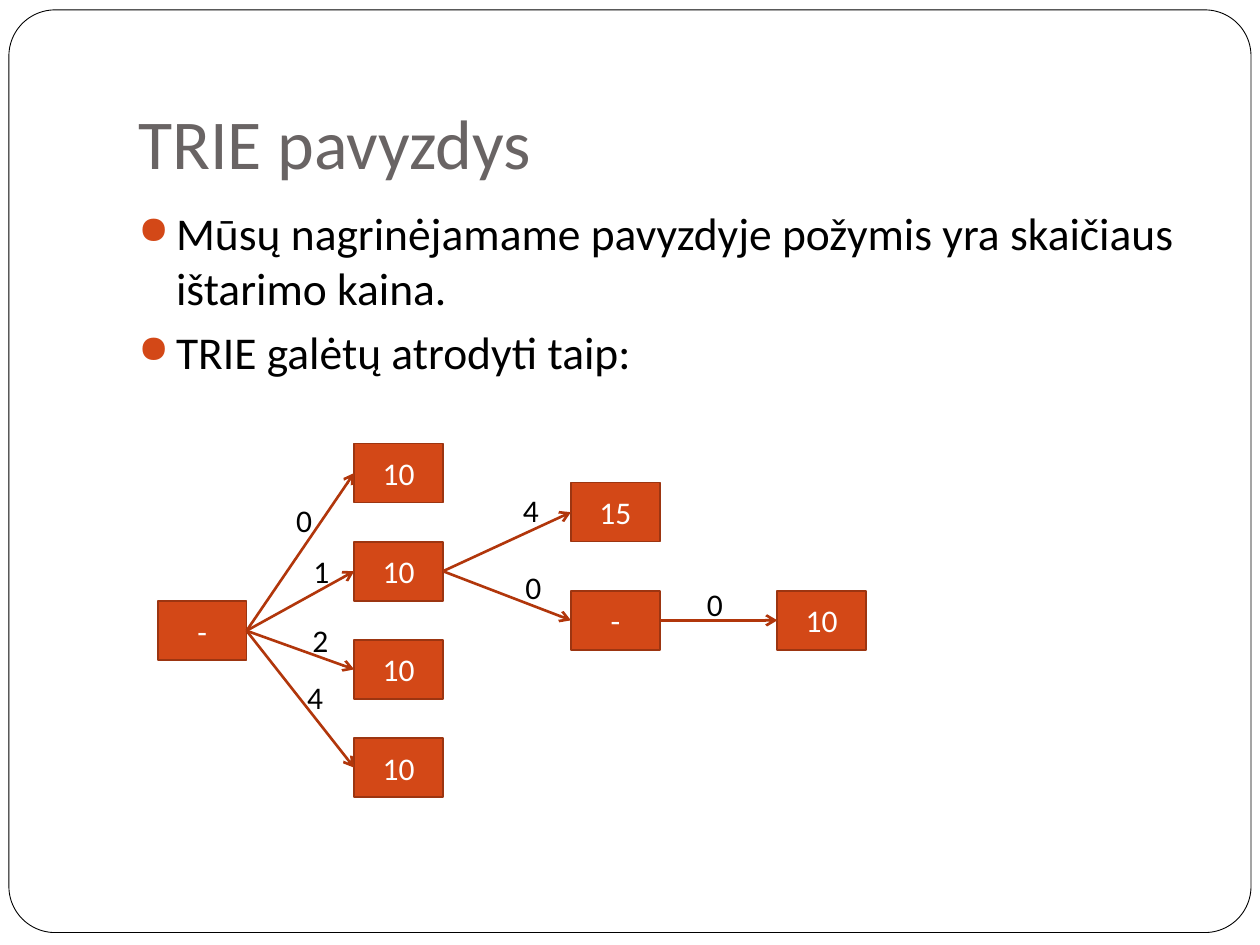
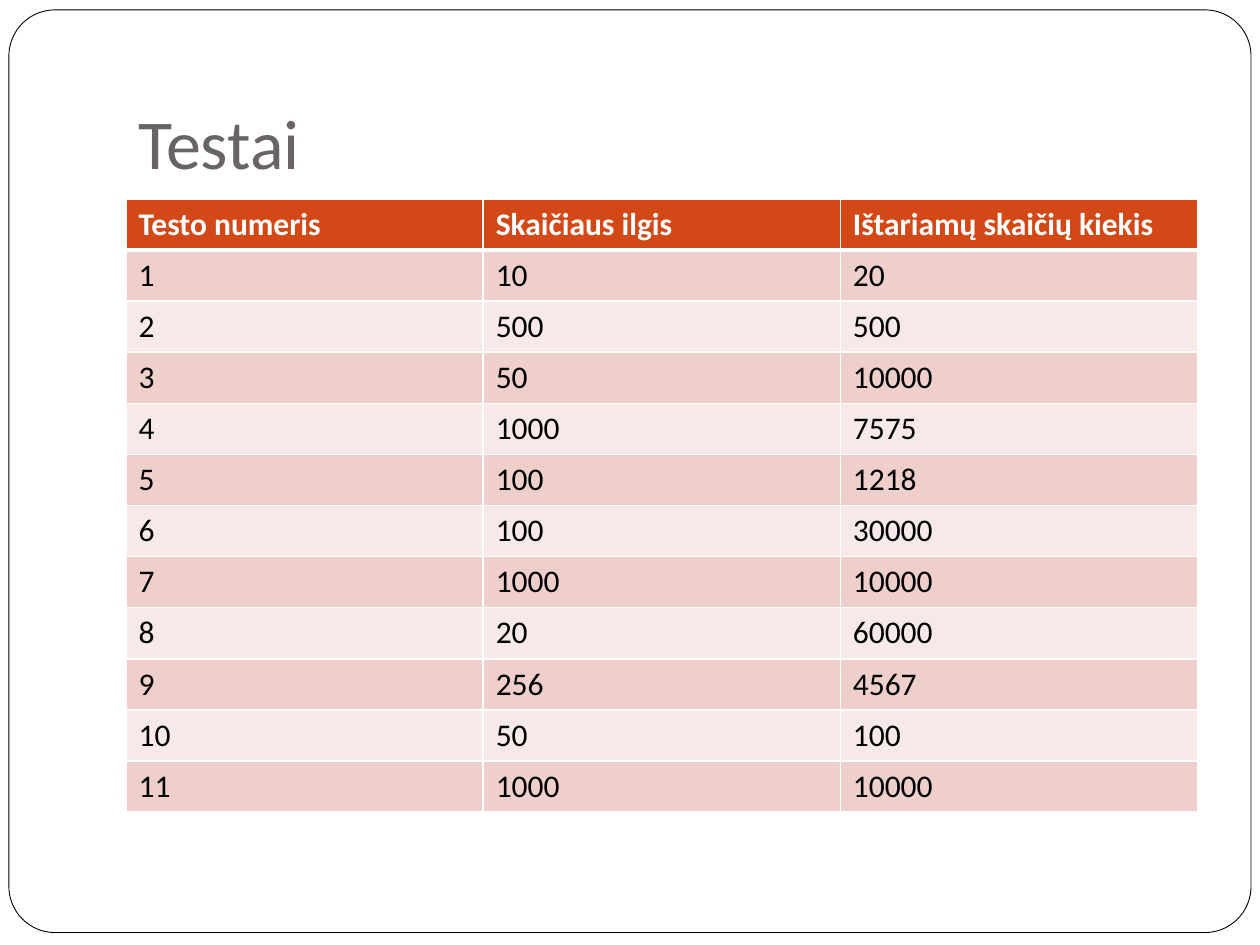
from pptx import Presentation
from pptx.dml.color import RGBColor
from pptx.enum.shapes import MSO_CONNECTOR as Link, MSO_SHAPE as Form
from pptx.enum.text import MSO_ANCHOR as Anchor, PP_ALIGN as Align
from pptx.oxml import parse_xml as to_xml
from pptx.oxml.ns import nsdecls
from pptx.util import Cm, Pt

FONT = "Calibri"
BLACK, WHITE, GREY = "000000", "FFFFFF", "696464"
RUST, EDGE, ARROW = "D34817", "9C3511", "B1360B"
BANDS = ["F7E9E8", "EFCFCC"]
NS = nsdecls("a")
BULLET = [
    f'<a:buClr {NS}><a:srgbClr val="{RUST}"/></a:buClr>',
    f'<a:buSzPct {NS} val="85000"/>',
    f'<a:buChar {NS} char="●"/>',
]


def hue(code):
    return RGBColor.from_string(code)


def put(frame, text, size=18, color=BLACK, bold=False, align=Align.LEFT,
        anchor=Anchor.TOP, bullet=False):
    frame.word_wrap = True
    frame.vertical_anchor = anchor
    for i, line in enumerate(text.split("\n")):
        par = frame.add_paragraph() if i else frame.paragraphs[0]
        par.alignment = align
        run = par.add_run()
        run.text = line
        font = run.font
        font.name, font.size, font.bold = FONT, Pt(size), bold
        font.color.rgb = hue(color)
        if bullet:
            par.space_before = Pt(5.8)
            props = par._p.get_or_add_pPr()
            props.set("marL", str(Cm(0.76)))
            props.set("indent", str(Cm(-0.76)))
            for part in BULLET:
                props.append(to_xml(part))


deck = Presentation()
deck.slide_width, deck.slide_height = Cm(25.4), Cm(19.05)

pages = []
for title in ["TRIE pavyzdys", "Testai"]:
    page = deck.slides.add_slide(deck.slide_layouts[6])
    rim = page.shapes.add_shape(
        Form.ROUNDED_RECTANGLE, Cm(0.18), Cm(0.2), Cm(25.04), Cm(18.6))
    rim.adjustments[0] = 0.05
    rim.shadow.inherit = False
    rim.fill.solid()
    rim.fill.fore_color.rgb = hue(WHITE)
    rim.line.color.rgb = hue(BLACK)
    rim.line.width = Pt(0.5)
    head = page.shapes.add_textbox(Cm(2.54), Cm(0.76), Cm(21.6), Cm(3.18))
    head.text_frame.margin_bottom = Cm(0.25)
    put(head.text_frame, title, size=40, color=GREY, anchor=Anchor.BOTTOM)
    pages.append(page)

tree, tests = pages

body = tree.shapes.add_textbox(Cm(2.54), Cm(4.01), Cm(21.6), Cm(3.91))
put(body.text_frame,
    "Mūsų nagrinėjamame pavyzdyje požymis yra skaičiaus ištarimo kaina.\n"
    "TRIE galėtų atrodyti taip:", size=26, bullet=True)

COLS = [3.18, 7.14, 11.51, 15.67]
TOP, STEP = 8.94, 1.98
nodes = [
    ("root", None, 0, 12.12, "-", None),
    ("a", "root", 1, TOP, "10", ("0", 5.72, 9.98)),
    ("b", "root", 1, TOP + STEP, "10", ("1", 6.07, 11)),
    ("c", "root", 1, TOP + 2 * STEP, "10", ("2", 6.05, 12.4)),
    ("d", "root", 1, TOP + 3 * STEP, "10", ("4", 5.94, 13.54)),
    ("e", "b", 2, 9.73, "15", ("4", 10.29, 9.78)),
    ("f", "b", 2, 11.91, "-", ("0", 10.34, 11.33)),
    ("g", "f", 3, 11.91, "10", ("0", 14, 11.66)),
]
boxes = {}
for key, up, col, top, value, label in nodes:
    box = tree.shapes.add_shape(
        Form.RECTANGLE, Cm(COLS[col]), Cm(top), Cm(1.79), Cm(1.19))
    box.shadow.inherit = False
    box.fill.solid()
    box.fill.fore_color.rgb = hue(RUST)
    box.line.color.rgb = hue(EDGE)
    box.line.width = Pt(1)
    put(box.text_frame, value, color=WHITE, align=Align.CENTER,
        anchor=Anchor.MIDDLE)
    boxes[key] = box
    if up:
        edge = tree.shapes.add_connector(Link.STRAIGHT, 0, 0, 0, 0)
        edge.begin_connect(boxes[up], 3)
        edge.end_connect(box, 1)
        edge.line.color.rgb = hue(ARROW)
        edge.line.width = Pt(1.5)
        edge.line._get_or_add_ln().append(
            to_xml(f'<a:tailEnd {NS} type="arrow"/>'))
        edge._element.spPr.append(to_xml(f"<a:effectLst {NS}/>"))
        digit, left, high = label
        tag = tree.shapes.add_textbox(Cm(left), Cm(high), Cm(0.99), Cm(1.02))
        put(tag.text_frame, digit)

rows = [
    ("Testo numeris", "Skaičiaus ilgis", "Ištariamų skaičių kiekis"),
    (1, 10, 20),
    (2, 500, 500),
    (3, 50, 10000),
    (4, 1000, 7575),
    (5, 100, 1218),
    (6, 100, 30000),
    (7, 1000, 10000),
    (8, 20, 60000),
    (9, 256, 4567),
    (10, 50, 100),
    (11, 1000, 10000),
]
grid = tests.shapes.add_table(
    len(rows), 3, Cm(2.54), Cm(4.01), Cm(21.6), Cm(12.36)).table
for col in grid.columns:
    col.width = Cm(7.2)
for r, row in enumerate(rows):
    grid.rows[r].height = Cm(1.03)
    for c, value in enumerate(row):
        cell = grid.cell(r, c)
        props = cell._tc.get_or_add_tcPr()
        for side in "LRTB":
            thick = (r, side) in [(0, "B"), (1, "T")]
            props.append(to_xml(
                f'<a:ln{side} {NS} w="{Pt(3 if thick else 1)}"><a:solidFill>'
                f'<a:srgbClr val="{WHITE}"/></a:solidFill></a:ln{side}>'))
        cell.fill.solid()
        cell.fill.fore_color.rgb = hue(BANDS[r % 2] if r else RUST)
        put(cell.text_frame, str(value), color=BLACK if r else WHITE,
            bold=r == 0)

deck.save("out.pptx")
